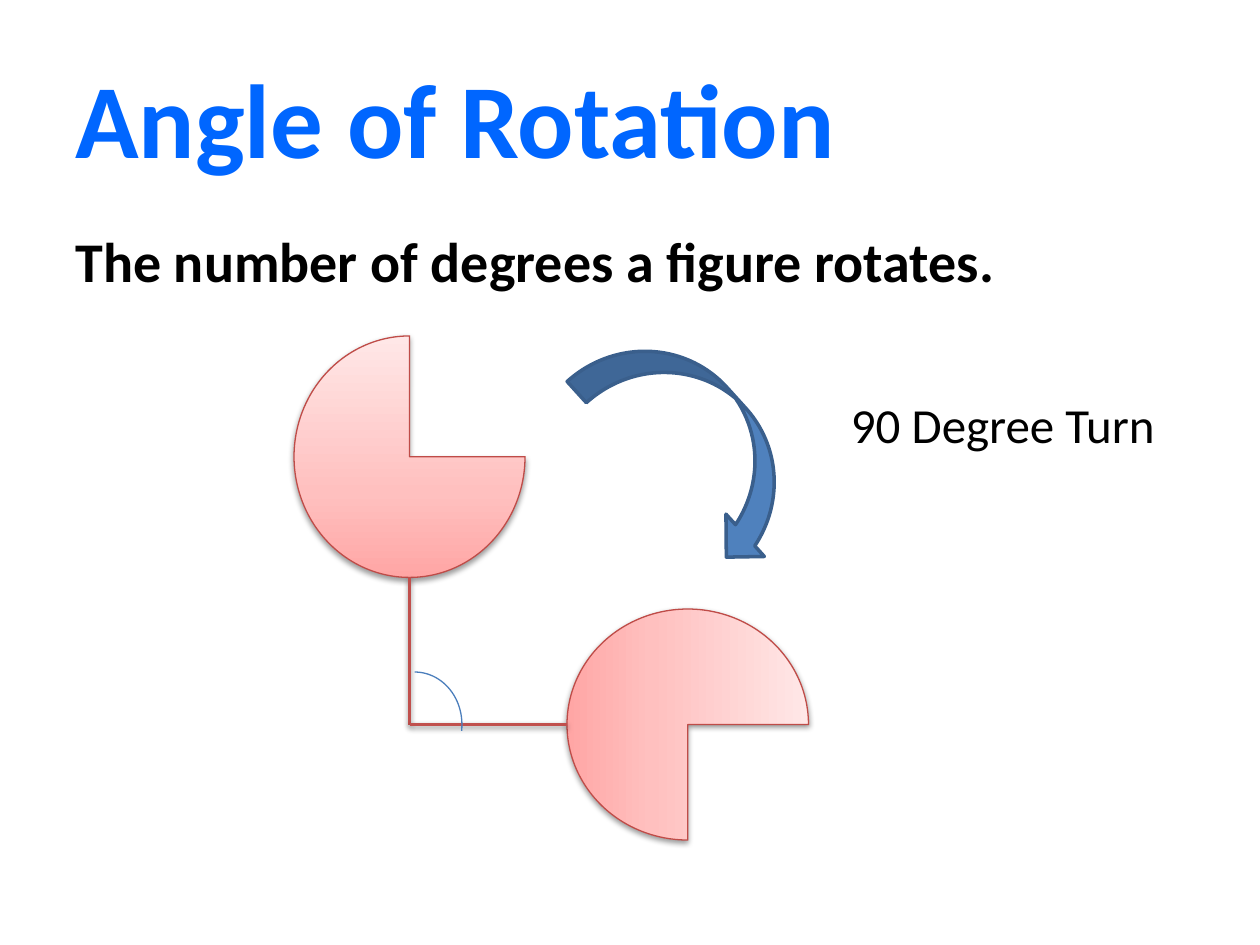
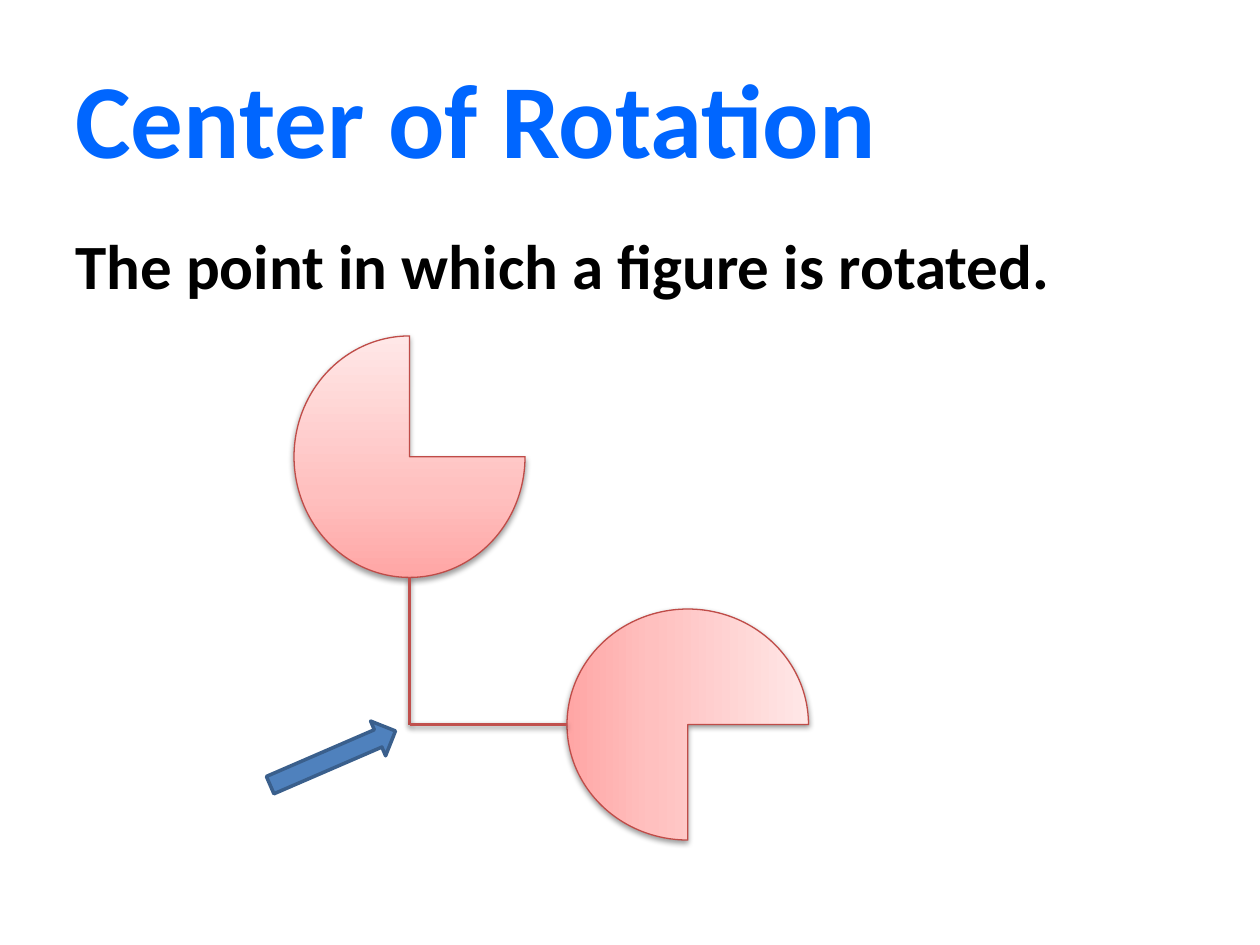
import copy

import pptx
import pptx.dml.color
import pptx.enum.shapes
import pptx.enum.text
import pptx.oxml
import pptx.oxml.ns
import pptx.util

SHAPE = pptx.enum.shapes.MSO_SHAPE
ANCHOR = pptx.enum.text.MSO_ANCHOR
ALIGN = pptx.enum.text.PP_ALIGN
qn = pptx.oxml.ns.qn
Pt = pptx.util.Pt

COLORS = {
    "title": "0066FF", "text": "000000",
    "pie_line": "BF4C48", "arm": "C0504D", "arc": "4B7EBC",
    "arrow": "4F81BD", "arrow_line": "3A5F8C",
}
RGB = {name: pptx.dml.color.RGBColor.from_string(c) for name, c in COLORS.items()}
PIE_STOPS = [(0, "FFA6A5"), (0.35, "FFC0BF"), (1, "FFE7E7")]
SHADOW = (
    f'<a:effectLst {pptx.oxml.ns.nsdecls("a")}>'
    '<a:outerShdw blurRad="40000" dist="20000" dir="5400000" rotWithShape="0">'
    '<a:srgbClr val="000000"><a:alpha val="38000"/></a:srgbClr>'
    '</a:outerShdw></a:effectLst>'
)

prs = pptx.Presentation()
prs.slide_width = pptx.util.Inches(10)
prs.slide_height = pptx.util.Inches(7.5)

# The slide is a grid of 120 columns by 90 rows; all places are in cells.
CELL = prs.slide_width / 120


def add_text(s, text, at, size, color="text", bold=False, align=ALIGN.LEFT,
             anchor=ANCHOR.TOP, before=0):
    tb = s.shapes.add_textbox(*(round(v * CELL) for v in at))
    tf = tb.text_frame
    tf.word_wrap = True
    tf.vertical_anchor = anchor
    p = tf.paragraphs[0]
    p.alignment = align
    p.space_before = Pt(before)
    r = p.add_run()
    r.text = text
    r.font.name = "Calibri"
    r.font.size = Pt(size)
    r.font.bold = bold
    r.font.color.rgb = RGB[color]


def add_shape(s, kind, at, line, width, fill=None, rotation=0):
    sp = s.shapes.add_shape(kind, *(round(v * CELL) for v in at))
    sp.rotation = rotation
    sp.shadow.inherit = False
    sp.line.color.rgb = RGB[line]
    sp.line.width = Pt(width)
    if fill:
        sp.fill.solid()
        sp.fill.fore_color.rgb = RGB[fill]
    else:
        sp.fill.background()
    return sp


slides = []
for title, definition, size in [
    ("Angle of Rotation", "The number of degrees a figure rotates.", 32),
    ("Center of Rotation", "The point in which a figure is rotated.", 36),
]:
    s = prs.slides.add_slide(prs.slide_layouts[6])
    slides.append(s)
    add_text(s, title, (6, 3.6, 108, 15), 60, color="title", bold=True,
             anchor=ANCHOR.MIDDLE)
    add_text(s, definition, (6, 21, 108, 59.4), size, bold=True, before=size * 0.2)

    # The figure before and after its quarter turn
    for left, top, rotation in [(28, 32, 0), (54.5, 57.5, 90)]:
        sp = add_shape(s, SHAPE.PIE, (left, top, 22, 23), "pie_line", 0.75,
                       rotation=rotation)
        sp.fill.gradient()
        sp.fill.gradient_angle = 90
        spPr = sp._element.spPr
        stops = spPr.find(qn("a:gradFill")).find(qn("a:gsLst"))
        stops.append(copy.deepcopy(stops[-1]))
        for stop, (position, color) in zip(sp.fill.gradient_stops, PIE_STOPS):
            stop.position = position
            stop.color.rgb = pptx.dml.color.RGBColor.from_string(color)
        spPr.replace(spPr.find(qn("a:effectLst")), pptx.oxml.parse_xml(SHADOW))

    # Arms from each figure to the center of rotation
    for ends in [(39, 55, 39, 69), (54, 69, 39, 69)]:
        arm = s.shapes.add_connector(pptx.enum.shapes.MSO_CONNECTOR.STRAIGHT,
                                     *(round(v * CELL) for v in ends))
        arm.line.color.rgb = RGB["arm"]
        arm.line.width = Pt(2)
        arm._element.spPr.append(pptx.oxml.parse_xml(SHADOW))

angle_slide, center_slide = slides

arc = add_shape(angle_slide, SHAPE.ARC, (35, 64, 9, 10), "arc", 0.75)
arc.adjustments[0] = 162
arc.adjustments[1] = 4.61
add_shape(angle_slide, SHAPE.CURVED_LEFT_ARROW, (61.1, 29.4, 10.9, 25.3),
          "arrow_line", 2, fill="arrow", rotation=317.8)
add_text(angle_slide, "90 Degree Turn", (79, 37, 33, 6.8), 28, align=ALIGN.CENTER)

add_shape(center_slide, SHAPE.RIGHT_ARROW, (25.2, 70.4, 13, 3.6),
          "arrow_line", 2, fill="arrow", rotation=336.6)

prs.save("out.pptx")
